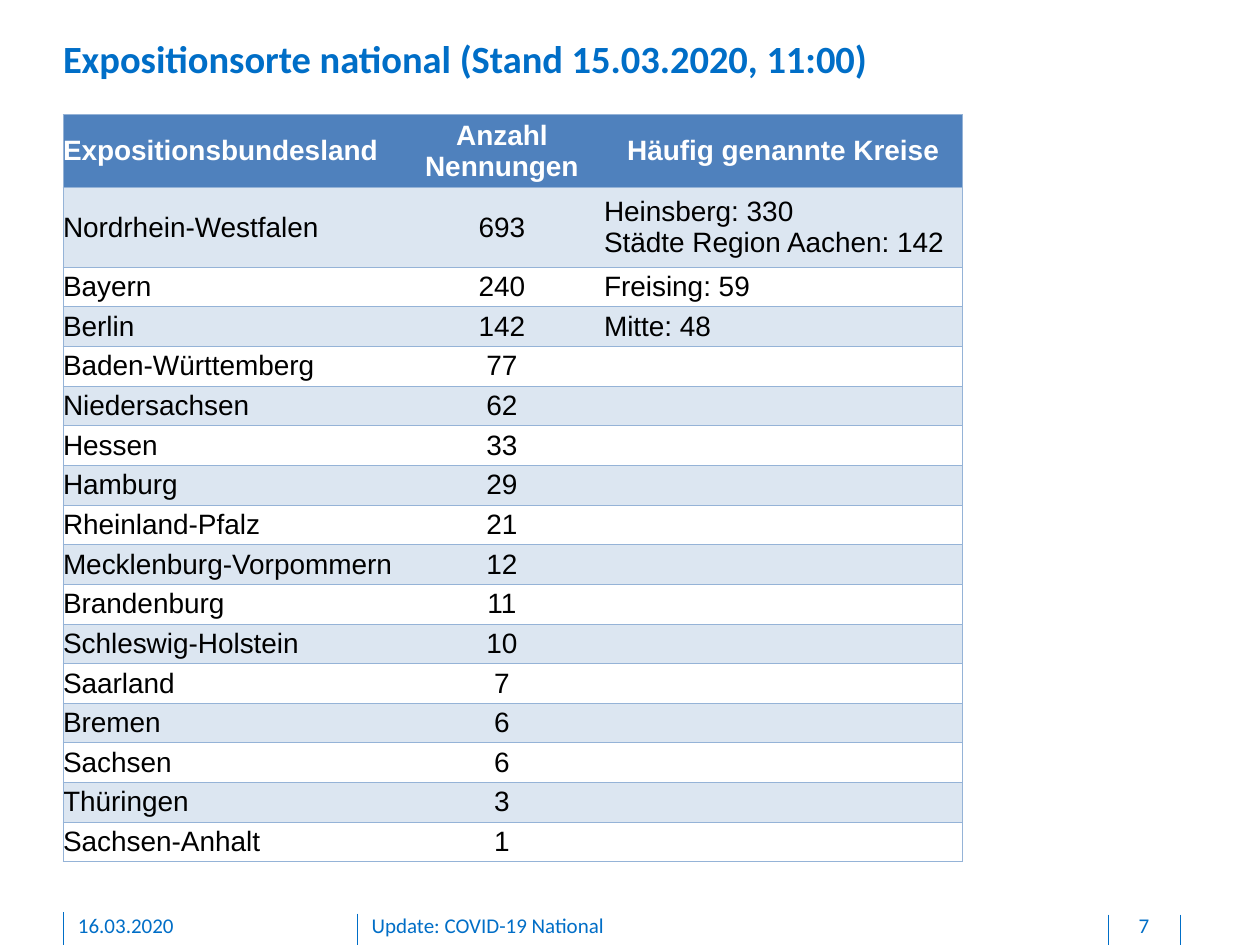
from lxml import etree
from pptx import Presentation
from pptx.dml.color import RGBColor
from pptx.enum.shapes import MSO_CONNECTOR
from pptx.enum.text import MSO_ANCHOR, MSO_AUTO_SIZE, PP_ALIGN
from pptx.oxml.ns import qn
from pptx.util import Pt

LINE = MSO_CONNECTOR.STRAIGHT
TOP, MIDDLE = MSO_ANCHOR.TOP, MSO_ANCHOR.MIDDLE
FIXED = MSO_AUTO_SIZE.NONE
LEFT, CENTER = PP_ALIGN.LEFT, PP_ALIGN.CENTER

BLUE, EDGE, HEAD, BAND = "006EC7", "95B3D7", "4F81BD", "DCE6F1"
TITLE = {"name": "Calibri", "size": Pt(22), "bold": True}
FOOT = {"name": "Calibri", "size": Pt(12)}
CELL = {"name": "Arial", "size": Pt(16), "bold": False}
TOPROW = {**CELL, "bold": True}

COLS = [192.5, 116.7, 204.7]
ROWS = [41.8, 45.4] + [22.65] * 15
DATA = [
    ("Expositionsbundesland", "Anzahl Nennungen", "Häufig genannte Kreise"),
    ("Nordrhein-Westfalen", "693", "Heinsberg: 330\vStädte Region Aachen: 142"),
    ("Bayern", "240", "Freising: 59"),
    ("Berlin", "142", "Mitte: 48"),
    ("Baden-Württemberg", "77", ""),
    ("Niedersachsen", "62", ""),
    ("Hessen", "33", ""),
    ("Hamburg", "29", ""),
    ("Rheinland-Pfalz", "21", ""),
    ("Mecklenburg-Vorpommern", "12", ""),
    ("Brandenburg", "11", ""),
    ("Schleswig-Holstein", "10", ""),
    ("Saarland", "7", ""),
    ("Bremen", "6", ""),
    ("Sachsen", "6", ""),
    ("Thüringen", "3", ""),
    ("Sachsen-Anhalt", "1", ""),
]


def color(code):
    return RGBColor.from_string(code)


def apply(item, values):
    for key, value in values.items():
        setattr(item, key, value)


def write(frame, text, font, code, align=LEFT):
    frame.text = text
    para = frame.paragraphs[0]
    para.alignment = align
    for run in para.runs:
        apply(run.font, font)
        run.font.color.rgb = color(code)


def set_frame(frame, foot=0):
    apply(frame, {
        "margin_left": 0, "margin_right": 0, "margin_top": 0,
        "margin_bottom": Pt(foot), "word_wrap": True,
        "auto_size": FIXED, "vertical_anchor": TOP,
    })


def add_title(slide, text):
    title = slide.shapes.title
    apply(title, {"left": Pt(36), "top": Pt(20.2),
                  "width": Pt(637), "height": Pt(26.6)})
    set_frame(title.text_frame)
    write(title.text_frame, text, TITLE, BLUE)


def add_note(slide, left, width, text, align=LEFT):
    box = slide.shapes.add_textbox(Pt(left), Pt(521.3), Pt(width), Pt(15.1))
    set_frame(box.text_frame, 3.6)
    write(box.text_frame, text, FOOT, BLUE, align)


def add_rule(slide, x, top):
    rule = slide.shapes.add_connector(LINE, Pt(x), Pt(top), Pt(x), Pt(540))
    rule.line.color.rgb = color(BLUE)
    rule.line.width = Pt(0.5)
    etree.SubElement(rule._element.spPr, qn("a:effectLst"))


def add_edges(cell, sides):
    props = cell._tc.get_or_add_tcPr()
    for side in "LRTB":
        edge = etree.SubElement(props, qn("a:ln" + side), w=str(Pt(0.5)))
        if side in sides:
            fill = etree.SubElement(edge, qn("a:solidFill"))
            etree.SubElement(fill, qn("a:srgbClr"), val=EDGE)
        else:
            etree.SubElement(edge, qn("a:noFill"))


def fill_cell(cell, text, row, col):
    apply(cell, {"margin_left": 0, "margin_right": 0, "margin_top": 0,
                 "margin_bottom": 0, "vertical_anchor": MIDDLE})
    add_edges(cell, ("LTB", "TB", "RTB")[col])
    if row == 0 or row % 2:
        cell.fill.solid()
        cell.fill.fore_color.rgb = color(BAND if row else HEAD)
    else:
        cell.fill.background()
    font, code = (CELL, "000000") if row else (TOPROW, "FFFFFF")
    align = CENTER if col == 1 or (col == 2 and row == 0) else LEFT
    write(cell.text_frame, text, font, code, align)


def add_grid(slide):
    frame = slide.shapes.add_table(len(ROWS), len(COLS), Pt(36), Pt(65.5),
                                   Pt(sum(COLS)), Pt(sum(ROWS)))
    table = frame.table
    apply(table, {"first_row": False, "horz_banding": False})
    for col, width in zip(table.columns, COLS):
        col.width = Pt(width)
    for row, height in zip(table.rows, ROWS):
        row.height = Pt(height)
    for r, texts in enumerate(DATA):
        for c, text in enumerate(texts):
            fill_cell(table.cell(r, c), text, r, c)


def main():
    deck = Presentation()
    apply(deck, {"slide_width": Pt(720), "slide_height": Pt(540)})
    slide = deck.slides.add_slide(deck.slide_layouts[5])
    for x, top in ((204.5, 522), (36, 521.3), (674.6, 522.7), (633.6, 522.7)):
        add_rule(slide, x, top)
    add_title(slide, "Expositionsorte national (Stand 15.03.2020, 11:00)")
    add_note(slide, 44.6, 146.2, "16.03.2020")
    add_note(slide, 212.4, 408.2, "Update: COVID-19 National")
    add_note(slide, 634.3, 38.9, "7", CENTER)
    add_grid(slide)
    deck.save("out.pptx")


if __name__ == "__main__":
    main()
